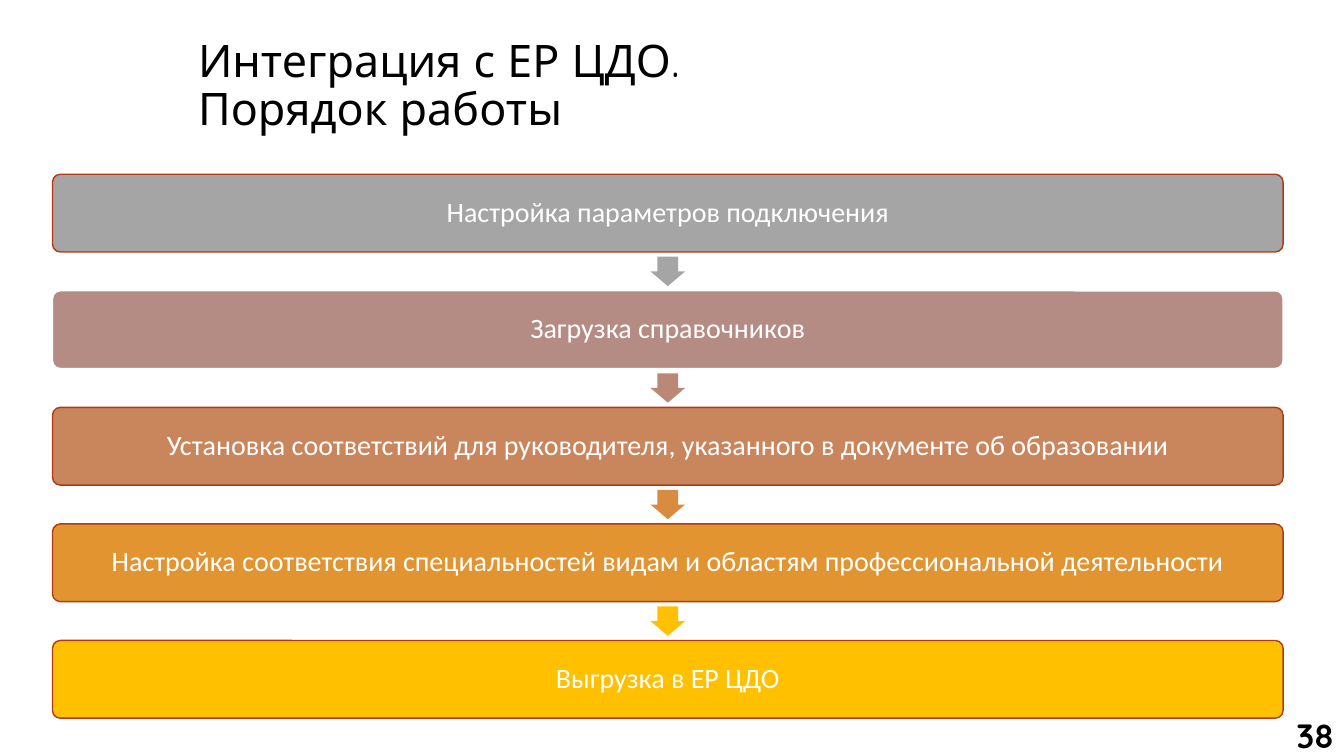
from dataclasses import dataclass

from pptx import Presentation
from pptx.dml.color import RGBColor
from pptx.enum.shapes import MSO_SHAPE
from pptx.enum.text import MSO_ANCHOR, MSO_AUTO_SIZE, PP_ALIGN
from pptx.util import Emu, Pt

EMU_PER_PX = 9525


@dataclass(frozen=True)
class Theme:
    heading_font: str = "Quicksand"
    body_font: str = "Calibri"
    ink: str = "000000"
    paper: str = "FFFFFF"
    outline: str = "B13913"
    title_size: int = 32
    step_size: int = 20
    number_size: int = 24


@dataclass(frozen=True)
class Step:
    text: str
    fill: str
    outline: str
    arrow: str | None = None


THEME = Theme()
STEPS = [
    Step("Настройка параметров подключения", "A5A5A5", THEME.outline, "A5A5A5"),
    Step("Загрузка справочников", "B48C83", THEME.paper, "BB8776"),
    Step("Установка соответствий для руководителя, указанного в документе об образовании",
         "C9855C", THEME.outline, "D98C3F"),
    Step("Настройка соответствия специальностей видам и областям профессиональной деятельности",
         "E19430", THEME.outline, "FFC000"),
    Step("Выгрузка в ЕР ЦДО", "FFC000", THEME.outline),
]
STEP_LEFT, STEP_TOP, STEP_WIDTH, STEP_HEIGHT, STEP_PITCH = 50, 166, 1172, 74, 111
ARROW_LENGTH, ARROW_BREADTH = 28, 33


def px(value: float) -> Emu:
    return Emu(round(value * EMU_PER_PX))


def write(shape, text: str, *, font: str, size: int, color: str, align=PP_ALIGN.LEFT,
          anchor=MSO_ANCHOR.MIDDLE, bold: bool = False, spacing: float = 0.9,
          inset: int | None = None) -> None:
    frame = shape.text_frame
    frame.word_wrap = True
    frame.auto_size = MSO_AUTO_SIZE.NONE
    frame.vertical_anchor = anchor
    if inset is not None:
        frame.margin_left = frame.margin_right = px(inset)
        frame.margin_top = frame.margin_bottom = px(inset)
    frame.text = text
    para = frame.paragraphs[0]
    para.alignment = align
    para.line_spacing = spacing
    for span in para.runs:
        span.font.name = font
        span.font.size = Pt(size)
        span.font.bold = bold
        span.font.color.rgb = RGBColor.from_string(color)


def add_filled(page, kind, left: float, top: float, width: int, height: int,
               fill: str, outline: str | None = None):
    shape = page.shapes.add_shape(kind, px(left), px(top), px(width), px(height))
    shape.shadow.inherit = False
    shape.fill.solid()
    shape.fill.fore_color.rgb = RGBColor.from_string(fill)
    if outline:
        shape.line.color.rgb = RGBColor.from_string(outline)
        shape.line.width = Pt(1)
    else:
        shape.line.fill.background()
    return shape


def add_step(page, step: Step, top: int) -> None:
    box = add_filled(page, MSO_SHAPE.ROUNDED_RECTANGLE, STEP_LEFT, top,
                     STEP_WIDTH, STEP_HEIGHT, step.fill, step.outline)
    box.adjustments[0] = 0.1
    write(box, step.text, font=THEME.body_font, size=THEME.step_size,
          color=THEME.paper, align=PP_ALIGN.CENTER, inset=8)
    if step.arrow:
        # The arrow is centred in the gap below its step
        center_x = STEP_LEFT + STEP_WIDTH / 2
        center_y = top + (STEP_HEIGHT + STEP_PITCH) / 2
        arrow = add_filled(page, MSO_SHAPE.RIGHT_ARROW, center_x - ARROW_LENGTH / 2,
                           center_y - ARROW_BREADTH / 2, ARROW_LENGTH, ARROW_BREADTH,
                           step.arrow)
        arrow.rotation = 90
        arrow.adjustments[0] = 0.6
        arrow.adjustments[1] = 0.5


def main() -> None:
    deck = Presentation()
    deck.slide_width, deck.slide_height = px(1280), px(720)
    page = deck.slides.add_slide(deck.slide_layouts[5])

    # Title
    title = page.shapes.title
    title.left, title.top, title.width, title.height = px(179), px(1), px(794), px(164)
    write(title, "Интеграция с ЕР ЦДО.\vПорядок работы", font=THEME.heading_font,
          size=THEME.title_size, color=THEME.ink)

    # Process steps
    for index, step in enumerate(STEPS):
        add_step(page, step, STEP_TOP + index * STEP_PITCH)

    # Slide number
    number = page.shapes.add_textbox(px(1179), px(676), px(101), px(44))
    write(number, "38", font=THEME.heading_font, size=THEME.number_size, color=THEME.ink,
          align=PP_ALIGN.RIGHT, anchor=MSO_ANCHOR.TOP, bold=True, spacing=1.0)

    deck.save("out.pptx")


if __name__ == "__main__":
    main()
